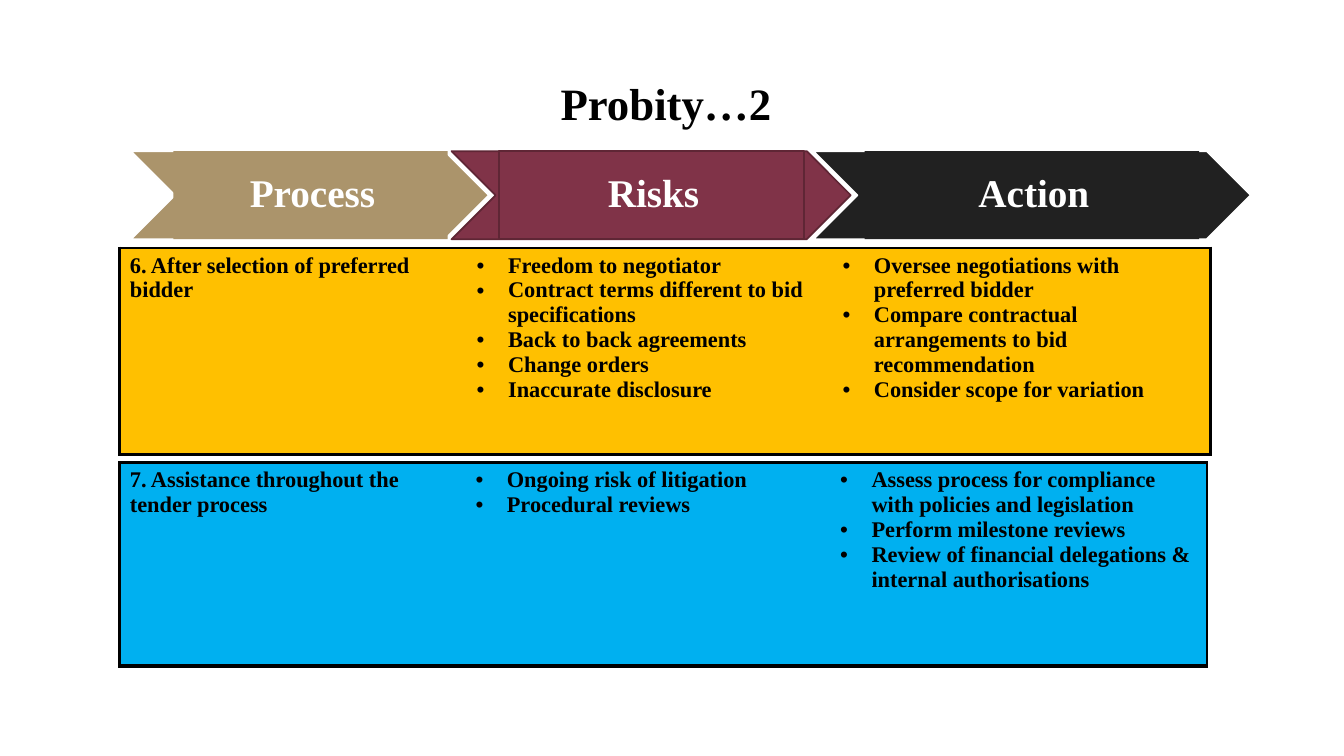
from lxml import etree
from pptx import Presentation
from pptx import util as u
from pptx.dml import color
from pptx.enum import shapes, text
from pptx.oxml import ns

BLACK, WHITE = "000000", "FFFFFF"


def rgb(hex_value):
    return color.RGBColor.from_string(hex_value)


class SlideBuilder:
    font = "Times New Roman"

    def __init__(self, slide):
        self.slide = slide

    def style(self, paragraph, size, ink):
        for run in paragraph.runs:
            run.font.name = self.font
            run.font.size = u.Pt(size)
            run.font.bold = True
            run.font.color.rgb = rgb(ink)

    def title(self, words, left, top, width, height):
        frame = self.slide.shapes.add_textbox(
            u.Cm(left), u.Cm(top), u.Cm(width), u.Cm(height)).text_frame
        frame.word_wrap = True
        frame.vertical_anchor = text.MSO_ANCHOR.MIDDLE
        frame.text = words
        frame.paragraphs[0].alignment = text.PP_ALIGN.CENTER
        self.style(frame.paragraphs[0], 32, BLACK)

    def block(self, preset, left, width, fill, line):
        shape = self.slide.shapes.add_shape(
            preset, u.Cm(left), u.Cm(3.81), u.Cm(width), u.Cm(2.22))
        shape.shadow.inherit = False
        shape.fill.solid()
        shape.fill.fore_color.rgb = rgb(fill)
        if line:
            shape.line.color.rgb = rgb(line)
            shape.line.width = u.Pt(1.25)
        else:
            shape.line.fill.background()
        return shape

    def heading(self, words, chevron, label, fill, chevron_line, label_line):
        self.block(shapes.MSO_SHAPE.CHEVRON, *chevron, fill, chevron_line)
        frame = self.block(shapes.MSO_SHAPE.RECTANGLE, *label, fill, label_line).text_frame
        frame.margin_left = u.Cm(0.15)
        frame.margin_right = frame.margin_top = frame.margin_bottom = u.Cm(0.05)
        frame.vertical_anchor = text.MSO_ANCHOR.MIDDLE
        frame.text = words
        frame.paragraphs[0].alignment = text.PP_ALIGN.CENTER
        frame.paragraphs[0].line_spacing = 0.9
        self.style(frame.paragraphs[0], 28, WHITE)

    def borders(self, cell, widths):
        """Draw the sides that have a width and clear the others."""
        properties = cell._tc.get_or_add_tcPr()
        for side in "LRTB":
            line = etree.SubElement(properties, ns.qn(f"a:ln{side}"))
            if side in widths:
                line.set("w", str(u.Pt(widths[side])))
                solid = etree.SubElement(line, ns.qn("a:solidFill"))
                etree.SubElement(solid, ns.qn("a:srgbClr"), val=BLACK)
            else:
                etree.SubElement(line, ns.qn("a:noFill"))

    def bullet(self, paragraph, indent):
        properties = paragraph._p.get_or_add_pPr()
        properties.set("marL", str(u.Cm(indent)))
        properties.set("indent", str(u.Cm(-0.79)))
        etree.SubElement(properties, ns.qn("a:buFont"), typeface="Arial")
        etree.SubElement(properties, ns.qn("a:buChar"), char="•")

    def stage(self, top, height, columns, fill, bottom_line, contents):
        table = self.slide.shapes.add_table(
            1, len(columns), u.Cm(3.02), u.Cm(top), u.Cm(sum(columns)), u.Cm(height)).table
        table.first_row = table.horz_banding = False
        table.rows[0].height = u.Cm(height)
        outer_sides = ({"L": 2.25}, {}, {"R": 2.25})
        indents = (None, 0.79, 1.27)
        for index, lines in enumerate(contents):
            table.columns[index].width = u.Cm(columns[index])
            cell = table.cell(0, index)
            self.borders(cell, {"T": 2.25, "B": bottom_line, **outer_sides[index]})
            cell.fill.solid()
            cell.fill.fore_color.rgb = rgb(fill)
            cell.text_frame.text = "\n".join(lines)
            for paragraph in cell.text_frame.paragraphs:
                if indents[index]:
                    self.bullet(paragraph, indents[index])
                self.style(paragraph, 16, BLACK)


def main():
    deck = Presentation()
    deck.slide_width, deck.slide_height = u.Cm(33.87), u.Cm(19.05)
    probity = SlideBuilder(deck.slides.add_slide(deck.slide_layouts[6]))

    probity.title("Probity…2", 4.4, 1.6, 24.77, 1.98)

    # Column headings: left and width of the chevron, then of its label
    probity.heading("Process", (3.3, 9.02), (4.37, 6.91), "AB946B", WHITE, None)
    probity.heading("Risks", (11.38, 10.06), (12.57, 7.7), "803348", "5F2635", "5F2635")
    probity.heading("Action", (20.5, 11.02), (21.79, 8.43), "212121", WHITE, None)

    # Stage 6
    probity.stage(6.25, 5.21, (8.74, 8.74, 10.01), "FFC000", 2.25, (
        ["6. After selection of preferred bidder"],
        ["Freedom to negotiator",
         "Contract terms different to bid specifications",
         "Back to back agreements",
         "Change orders",
         "Inaccurate disclosure"],
        ["Oversee negotiations with preferred bidder",
         "Compare contractual arrangements to bid recommendation",
         "Consider scope for variation"]))

    # Stage 7
    probity.stage(11.66, 5.13, (8.71, 8.71, 9.98), "00B0F0", 3, (
        ["7. Assistance throughout the tender process"],
        ["Ongoing risk of litigation",
         "Procedural reviews"],
        ["Assess process for compliance with policies and legislation",
         "Perform milestone reviews",
         "Review of financial delegations & internal authorisations"]))

    deck.save("out.pptx")


if __name__ == "__main__":
    main()
